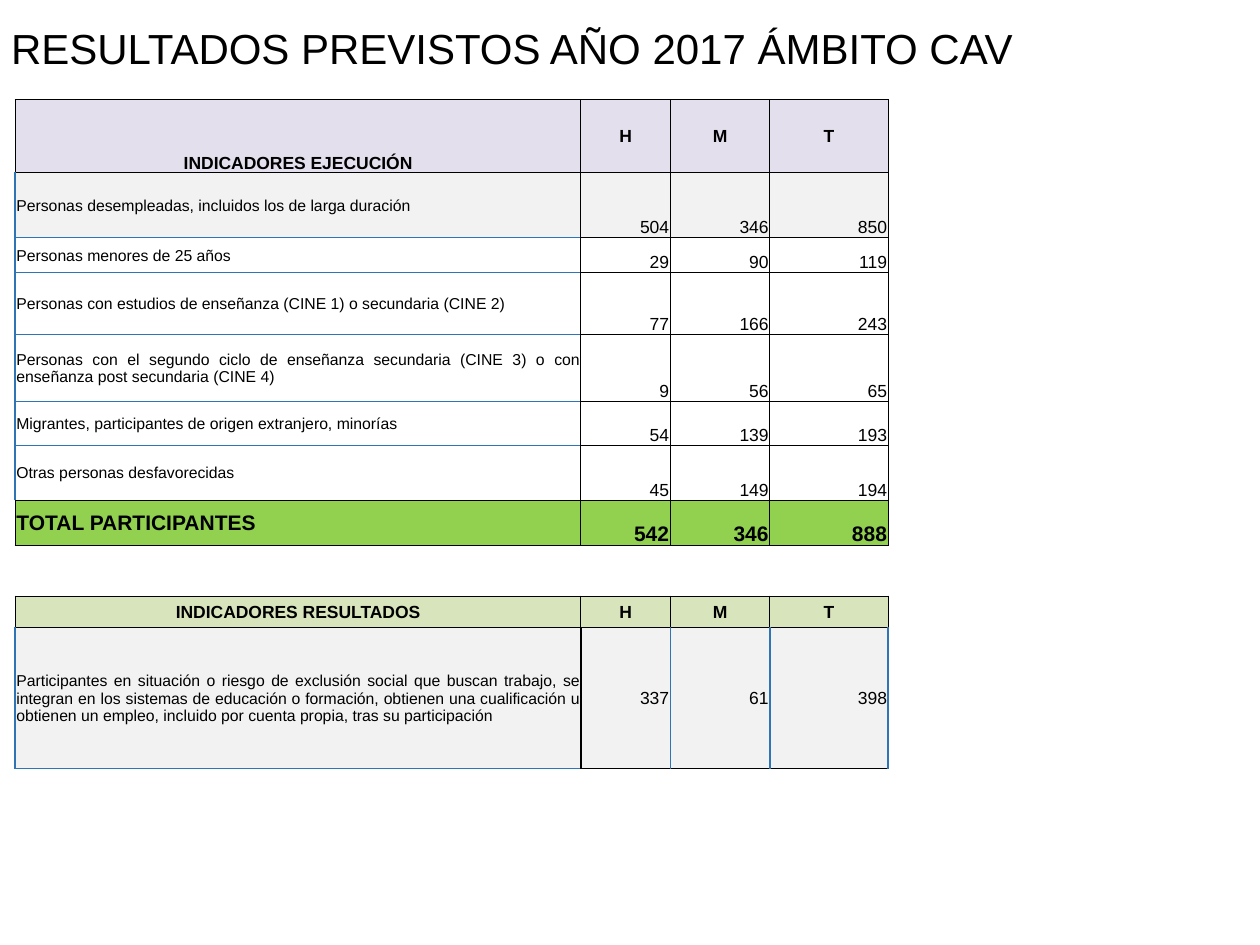
from lxml.etree import SubElement as Sub
from pptx import Presentation
from pptx.dml.color import RGBColor as RGB
from pptx.enum.text import MSO_ANCHOR as Anchor, PP_ALIGN as Align
from pptx.oxml.ns import qn
from pptx.util import Inches, Pt

WIDE, HIGH = Inches(10), Inches(7.5)
BLACK = RGB(0x00, 0x00, 0x00)
BLUE = RGB(0x2F, 0x75, 0xB5)
WHITE = RGB(0xFF, 0xFF, 0xFF)
GREY = RGB(0xF2, 0xF2, 0xF2)
LILAC = RGB(0xE4, 0xDF, 0xEC)
GREEN = RGB(0x92, 0xD0, 0x50)
OLIVE = RGB(0xD8, 0xE4, 0xBC)

THIN, BOLD, SKY = (BLACK, 0.5), (BLACK, 1), (BLUE, 1)
GRID = (THIN,) * 4
COLS = (449, 71, 79, 94)

EXEC = (
    ("INDICADORES EJECUCIÓN", "H", "M", "T"),
    ("Personas desempleadas, incluidos los de larga duración", "504", "346", "850"),
    ("Personas menores de 25 años", "29", "90", "119"),
    ("Personas con estudios de enseñanza (CINE 1) o secundaria (CINE 2)", "77", "166", "243"),
    ("Personas con el segundo ciclo de enseñanza secundaria (CINE 3) o con "
     "enseñanza post secundaria (CINE 4)", "9", "56", "65"),
    ("Migrantes, participantes de origen extranjero, minorías", "54", "139", "193"),
    ("Otras personas desfavorecidas", "45", "149", "194"),
    ("TOTAL PARTICIPANTES", "542", "346", "888"),
)
GOALS = (
    ("INDICADORES RESULTADOS", "H", "M", "T"),
    ("Participantes en situación o riesgo de exclusión social que buscan trabajo, "
     "se integran en los sistemas de educación o formación, obtienen una "
     "cualificación u obtienen un empleo, incluido por cuenta propia, tras su "
     "participación", "337", "61", "398"),
)


def share(x, y, w, h):
    return int(WIDE * x), int(HIGH * y), int(WIDE * w), int(HIGH * h)


def style(par, size, bold, align):
    par.alignment = align
    font = par.font
    font.name, font.size, font.bold = "Arial", Pt(size), bold
    font.color.rgb = BLACK


def edge(cell, lines):
    props = cell._tc.get_or_add_tcPr()
    for tag, (color, width) in zip("LRTB", lines):
        line = Sub(props, qn("a:ln" + tag), w=str(Pt(width)))
        fill = Sub(line, qn("a:solidFill"))
        Sub(fill, qn("a:srgbClr"), val=str(color))


def put(cell, text, size, bold, align, anchor, fill, lines):
    cell.margin_left = cell.margin_right = cell.margin_top = Inches(0.01)
    cell.margin_bottom = 0
    cell.vertical_anchor = anchor
    cell.text = text
    style(cell.text_frame.paragraphs[0], size, bold, align)
    edge(cell, lines)
    if fill is None:
        cell.fill.background()
    else:
        cell.fill.solid()
        cell.fill.fore_color.rgb = fill


def add_grid(slide, box, rows, data):
    table = slide.shapes.add_table(len(data), len(COLS), *box).table
    table.first_row = table.horz_banding = False
    for col, part in zip(table.columns, COLS):
        col.width = int(box[2] * part / sum(COLS))
    for row, part in zip(table.rows, rows):
        row.height = int(box[3] * part / sum(rows))
    return table


def add_title(slide, box):
    frame = slide.shapes.add_textbox(*box).text_frame
    frame.word_wrap = True
    frame.text = "RESULTADOS PREVISTOS AÑO 2017 ÁMBITO CAV"
    style(frame.paragraphs[0], 24, False, Align.LEFT)


def add_exec(slide, box):
    table = add_grid(slide, box, (58, 51, 28, 49, 53, 35, 43, 36), EXEC)
    last = len(EXEC) - 1
    for r, row in enumerate(EXEC):
        for c, text in enumerate(row):
            cell, label = table.cell(r, c), c == 0
            anchor = Anchor.MIDDLE if label else Anchor.BOTTOM
            align = Align.JUSTIFY if label else Align.RIGHT
            if r == 0:
                anchor = Anchor.BOTTOM if label else Anchor.MIDDLE
                put(cell, text, 10, True, Align.CENTER, anchor, LILAC, GRID)
            elif r == last:
                put(cell, text, 12, True, align, anchor, GREEN, GRID)
            else:
                top = THIN if r == 1 else SKY
                base = THIN if r == last - 1 else SKY
                lines = (SKY, THIN, top, base) if label else GRID
                fill = GREY if r == 1 else None if label else WHITE
                put(cell, text, 9 if label else 10, False, align, anchor, fill, lines)


def add_goals(slide, box):
    table = add_grid(slide, box, (25, 112), GOALS)
    sides = ((SKY, BOLD, THIN, SKY), (BOLD, SKY, THIN, BOLD),
             (SKY, SKY, THIN, BOLD), (SKY, SKY, THIN, BOLD))
    head, body = GOALS
    for c, lines in enumerate(sides):
        put(table.cell(0, c), head[c], 10, True, Align.CENTER, Anchor.MIDDLE, OLIVE, GRID)
        size, align = (10, Align.RIGHT) if c else (9, Align.JUSTIFY)
        put(table.cell(1, c), body[c], size, False, align, Anchor.MIDDLE, GREY, lines)


def main():
    deck = Presentation()
    deck.slide_width, deck.slide_height = WIDE, HIGH
    slide = deck.slides.add_slide(deck.slide_layouts[6])
    add_title(slide, share(-0.001, 0.13 / 7.5, 1.013, 0.5 / 7.5))
    add_exec(slide, share(0.012, 0.79 / 7.5, 0.693, 3.54 / 7.5))
    add_goals(slide, share(0.012, 4.73 / 7.5, 0.693, 1.37 / 7.5))
    deck.save("out.pptx")


if __name__ == "__main__":
    main()
